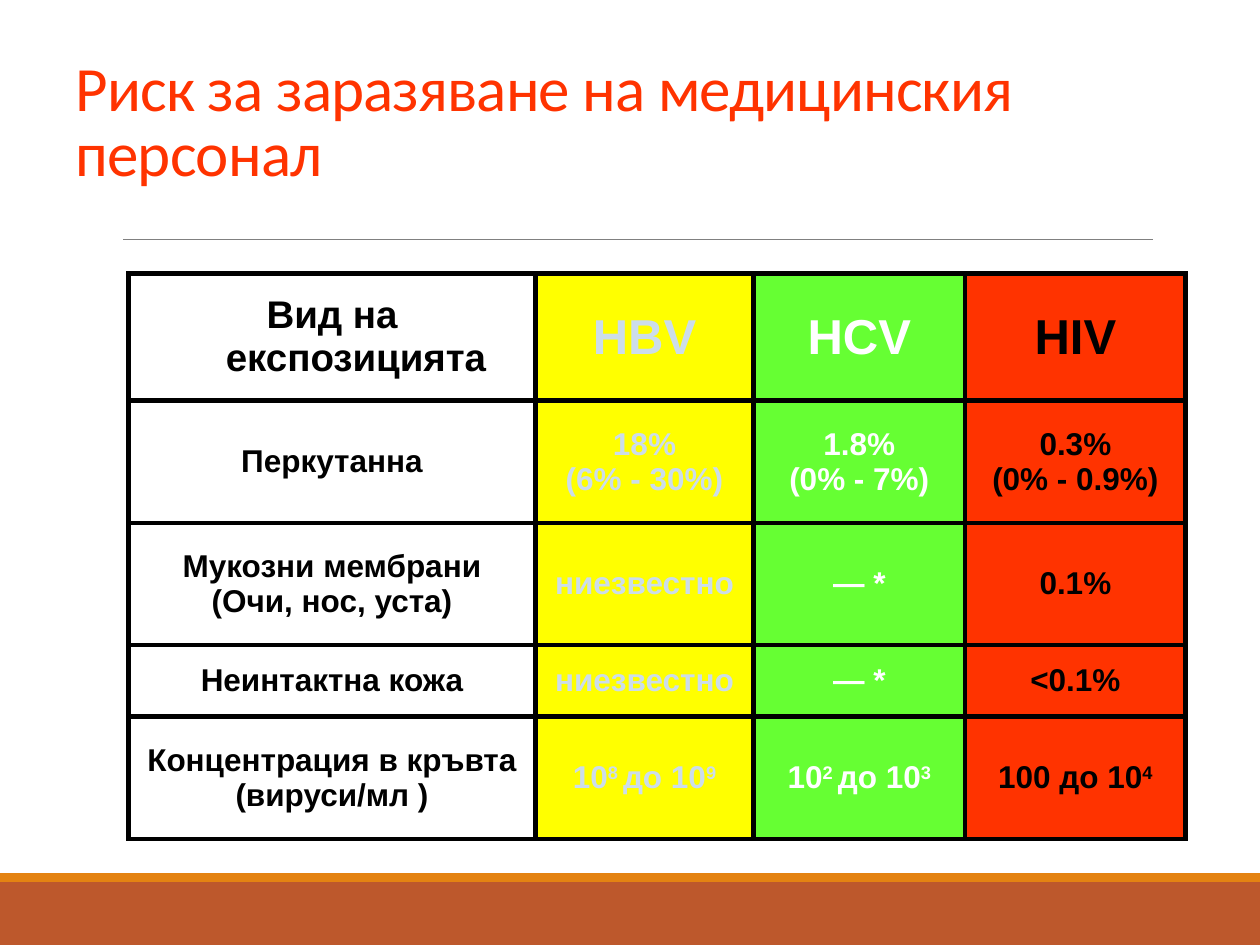
from lxml import etree
from pptx import Presentation
from pptx import util as u
from pptx.dml.color import RGBColor
from pptx.enum import shapes, text
from pptx.oxml import parse_xml
from pptx.oxml.ns import nsdecls, qn

COLORS = {
    "white": "FFFFFF", "black": "000000", "grey": "808080", "pale": "CCDDEA",
    "yellow": "FFFF00", "green": "66FF33", "red": "FF3300",
    "rust": "BD582C", "orange": "E48312",
}
WIDTH, HEIGHT = 10, 7.5

# Fill and text colour of each table column
COLUMN_STYLES = [("white", "black"), ("yellow", "pale"),
                 ("green", "white"), ("red", "black")]
COLUMN_WIDTHS = [3.23, 1.73, 1.68, 1.75]
ROW_HEIGHTS = [1.01, 0.97, 0.97, 0.57, 0.97]
# Newlines part paragraphs; carets enclose superscripts
RISKS = [
    ["Вид на експозицията", "HBV", "HCV", "HIV"],
    ["Перкутанна", "18%\n(6% - 30%)", "1.8%\n(0% - 7%)", "0.3%\n(0% - 0.9%)"],
    ["Мукозни мембрани\n(Очи, нос, уста)", "ниезвестно", "— *", "0.1%"],
    ["Неинтактна кожа", "ниезвестно", "— *", "<0.1%"],
    ["Концентрация в кръвта\n(вируси/мл )", "10^8 ^до 10^9",
     "10^2 ^до 10^3", "100 до 10^4"],
]


def rgb(name):
    return RGBColor.from_string(COLORS[name])


class SlideBuilder:
    title_font, table_font = "Calibri", "Arial"
    hanging = u.Inches(0.38)

    def __init__(self, prs):
        self.prs = prs
        self.s = prs.slides.add_slide(prs.slide_layouts[5])

    def box(self, *shares):
        """Turn shares of the slide's size into lengths."""
        sides = (self.prs.slide_width, self.prs.slide_height) * 2
        return [round(share * side) for share, side in zip(shares, sides)]

    def title(self, wording, *shares):
        sp = self.s.shapes.title
        sp.left, sp.top, sp.width, sp.height = self.box(*shares)
        tf = sp.text_frame
        tf.text = wording
        tf.word_wrap = True
        tf.auto_size = text.MSO_AUTO_SIZE.NONE
        tf.vertical_anchor = text.MSO_ANCHOR.BOTTOM
        p = tf.paragraphs[0]
        p.alignment = text.PP_ALIGN.LEFT
        p.line_spacing = 0.85
        self.font(p, self.title_font, 36, "red")
        p.runs[0].font._element.set("spc", "-50")

    def font(self, p, name, size, color, bold=False):
        p.font.name, p.font.size, p.font.bold = name, u.Pt(size), bold
        p.font.color.rgb = rgb(color)

    def band(self, color, *shares):
        sp = self.s.shapes.add_shape(shapes.MSO_SHAPE.RECTANGLE, *self.box(*shares))
        sp.shadow.inherit = False
        sp.fill.solid()
        sp.fill.fore_color.rgb = rgb(color)
        sp.line.fill.background()

    def rule(self, color, points, *shares):
        line = self.s.shapes.add_connector(
            shapes.MSO_CONNECTOR.STRAIGHT, *self.box(*shares))
        line.line.color.rgb = rgb(color)
        line.line.width = u.Pt(points)
        etree.SubElement(line._element.spPr, qn("a:effectLst"))

    def table(self, rows, widths, heights, left, top):
        size = sum(widths) / WIDTH, sum(heights) / HEIGHT
        table = self.s.shapes.add_table(
            len(rows), len(widths), *self.box(left, top, *size)).table
        table.first_row = table.horz_banding = False
        for column, width in zip(table.columns, widths):
            column.width = u.Inches(width)
        for row, height in zip(table.rows, heights):
            row.height = u.Inches(height)
        for i, row in enumerate(rows):
            for j, (wording, style) in enumerate(zip(row, COLUMN_STYLES)):
                points = 18 if i else 28 if j else 22
                self.cell(table.cell(i, j), wording, points, *style)

    def cell(self, cell, wording, points, fill, color):
        cell.vertical_anchor = text.MSO_ANCHOR.MIDDLE
        cell.fill.solid()
        cell.fill.fore_color.rgb = rgb(fill)
        self.borders(cell, "black", 3)
        tf = cell.text_frame
        for k, line in enumerate(wording.split("\n")):
            p = tf.add_paragraph() if k else tf.paragraphs[0]
            p.alignment = text.PP_ALIGN.CENTER
            pPr = p._p.get_or_add_pPr()
            pPr.set("marL", str(self.hanging))
            pPr.set("indent", str(-self.hanging))
            self.font(p, self.table_font, points, color, bold=True)
            for n, part in enumerate(line.split("^")):
                r = p.add_run()
                r.text = part
                if n % 2:
                    r.font._element.set("baseline", "30000")

    def borders(self, cell, color, points):
        tcPr = cell._tc.get_or_add_tcPr()
        for n, side in enumerate("LRTB"):
            tcPr.insert(n, parse_xml(
                f'<a:ln{side} {nsdecls("a")} w="{u.Pt(points)}"><a:solidFill>'
                f'<a:srgbClr val="{COLORS[color]}"/></a:solidFill></a:ln{side}>'))


def main():
    prs = Presentation()
    prs.slide_width, prs.slide_height = u.Inches(WIDTH), u.Inches(HEIGHT)
    slide = SlideBuilder(prs)

    # Footer bands and rule under the title
    slide.band("rust", 0, 7 / HEIGHT, 1, 0.5 / HEIGHT)
    slide.band("orange", 0, 6.93 / HEIGHT, 1, 0.07 / HEIGHT)
    slide.rule("grey", 0.5, 0.098, 1.9 / HEIGHT, 0.915, 1.9 / HEIGHT)

    # Title
    slide.title("Риск за заразяване на медицинския персонал",
                0.05, 0.04, 0.9, 1.25 / HEIGHT)

    # Risk by kind of exposure and virus
    slide.table(RISKS, COLUMN_WIDTHS, ROW_HEIGHTS, 0.102, 2.17 / HEIGHT)

    prs.save("out.pptx")


if __name__ == "__main__":
    main()
